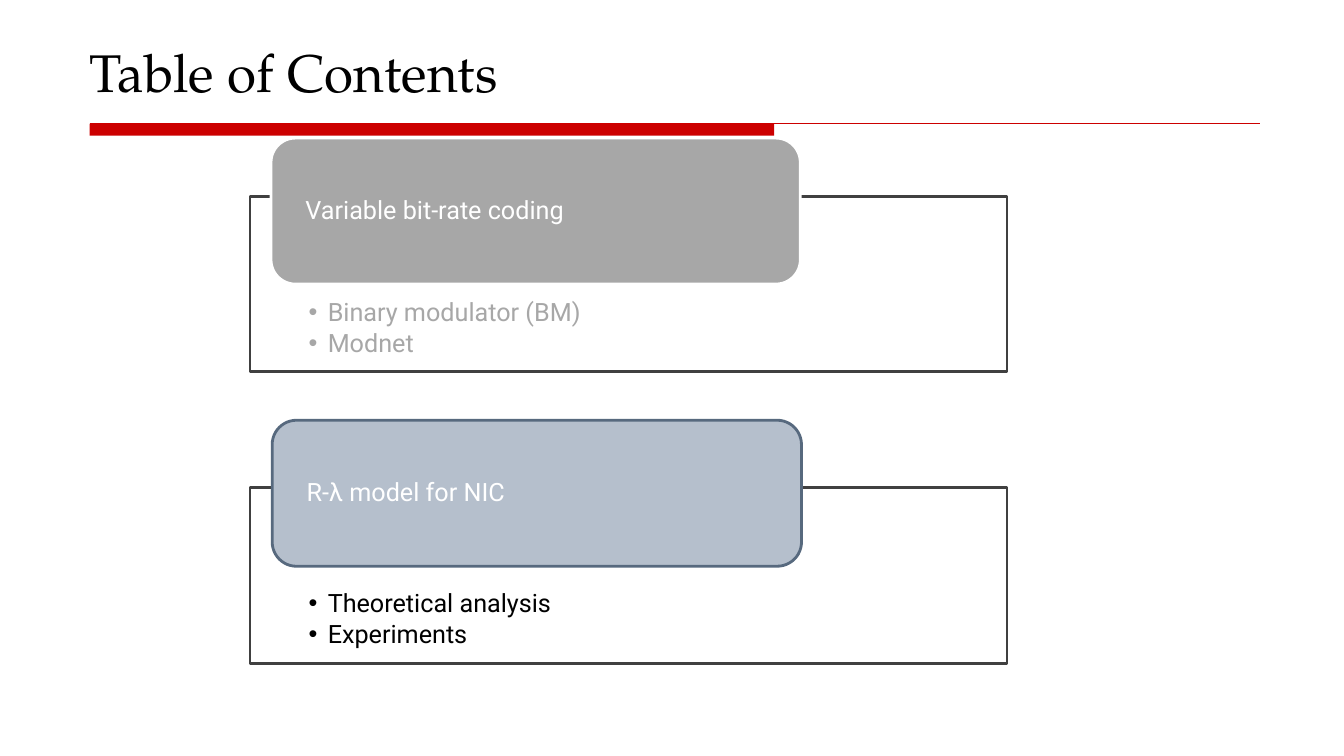
from dataclasses import dataclass

from lxml.etree import SubElement
from pptx import Presentation
from pptx.dml.color import RGBColor
from pptx.enum.shapes import MSO_CONNECTOR, MSO_SHAPE
from pptx.enum.text import MSO_ANCHOR, MSO_AUTO_SIZE, PP_ALIGN
from pptx.oxml.ns import qn
from pptx.util import Cm, Pt


@dataclass(frozen=True)
class Theme:
    title_font: str = "TeX Gyre Pagella"
    body_font: str = "Roboto"
    title_size: float = 37.8
    body_size: float = 18
    outline: float = 2
    rule: float = 0.75
    red: str = "CC0000"
    black: str = "000000"
    white: str = "FFFFFF"
    border: str = "404040"
    muted: str = "A7A7A7"
    active: str = "B5BFCC"
    active_border: str = "57697E"


THEME = Theme()

# Heading, items, panel top, card left and top (cm), card fill, card line, item colour
SECTIONS = [
    ("Variable bit-rate coding", ["Binary modulator (BM)", "Modnet"],
     4.95, 6.83, 3.48, THEME.muted, THEME.white, THEME.muted),
    ("R-λ model for NIC", ["Theoretical analysis", "Experiments"],
     12.29, 6.86, 10.59, THEME.active, THEME.active_border, THEME.black),
]


def rgb(code):
    return RGBColor.from_string(code)


def place(s, left, top, width, height):
    s.left, s.top, s.width, s.height = Cm(left), Cm(top), Cm(width), Cm(height)


def paint(s, fill, line):
    s.fill.solid()
    s.fill.fore_color.rgb = rgb(fill)
    s.line.color.rgb = rgb(line)
    s.line.width = Pt(THEME.outline)


def set_frame(tf, anchor, left, top, right, bottom):
    tf.word_wrap = True
    tf.auto_size = MSO_AUTO_SIZE.NONE
    tf.vertical_anchor = anchor
    tf.margin_left, tf.margin_top = Cm(left), Cm(top)
    tf.margin_right, tf.margin_bottom = Cm(right), Cm(bottom)


def format_paragraph(p, font, size, color):
    p.alignment = PP_ALIGN.LEFT
    p.space_before = Pt(0)
    for r in p.runs:
        r.font.name = font
        r.font.size = Pt(size)
        r.font.color.rgb = rgb(color)


def add_bullet(p):
    pPr = p._p.get_or_add_pPr()
    pPr.set("marL", str(Cm(0.48)))
    pPr.set("indent", str(-Cm(0.48)))
    SubElement(pPr, qn("a:buChar")).set("char", "•")


def set_title(s, text):
    place(s, 2.13, 0.84, 29.64, 1.88)
    tf = s.text_frame
    tf.text = text
    set_frame(tf, MSO_ANCHOR.BOTTOM, 0.13, 0.13, 0.13, 0.13)
    format_paragraph(tf.paragraphs[0], THEME.title_font, THEME.title_size, THEME.black)


def add_title_rule(shapes):
    left, top = Cm(2.26), Cm(3.12)
    bar = shapes.add_shape(MSO_SHAPE.RECTANGLE, left, top, Cm(17.25), Cm(0.3))
    bar.shadow.inherit = False
    bar.fill.solid()
    bar.fill.fore_color.rgb = rgb(THEME.red)
    bar.line.fill.background()

    line = shapes.add_connector(MSO_CONNECTOR.STRAIGHT, left, top, Cm(31.75), top)
    line.line.color.rgb = rgb(THEME.red)
    line.line.width = Pt(THEME.rule)
    SubElement(line._element.spPr, qn("a:effectLst"))


def set_panel(s, items, top, color):
    place(s, 6.3, top, 19.08, 4.42)
    paint(s, THEME.white, THEME.border)
    tf = s.text_frame
    tf.text = "\n".join(items)
    set_frame(tf, MSO_ANCHOR.TOP, 1.48, 2.59, 1.48, 0.36)
    for p in tf.paragraphs:
        add_bullet(p)
        p.line_spacing = 0.9
        p.space_after = Pt(0.15 * THEME.body_size)
        format_paragraph(p, THEME.body_font, THEME.body_size, color)


def add_card(shapes, heading, left, top, fill, line):
    s = shapes.add_shape(MSO_SHAPE.ROUNDED_RECTANGLE,
                         Cm(left), Cm(top), Cm(13.34), Cm(3.68))
    s.shadow.inherit = False
    paint(s, fill, line)
    tf = s.text_frame
    tf.text = heading
    set_frame(tf, MSO_ANCHOR.MIDDLE, 0.69, 0, 0.69, 0)
    p = tf.paragraphs[0]
    p.line_spacing = 0.9
    format_paragraph(p, THEME.body_font, THEME.body_size, THEME.white)


def main():
    prs = Presentation()
    prs.slide_width, prs.slide_height = Cm(33.87), Cm(19.05)

    # The two-content layout gives a title and one list per section
    slide = prs.slides.add_slide(prs.slide_layouts[3])
    panels = [slide.placeholders[1], slide.placeholders[2]]

    # Title and its rule
    set_title(slide.shapes.title, "Table of Contents")
    add_title_rule(slide.shapes)

    # Sections: outlined list panel with a heading card on top
    for panel, section in zip(panels, SECTIONS):
        heading, items, panel_top, left, top, fill, line, color = section
        set_panel(panel, items, panel_top, color)
        add_card(slide.shapes, heading, left, top, fill, line)

    prs.save("out.pptx")


if __name__ == "__main__":
    main()
